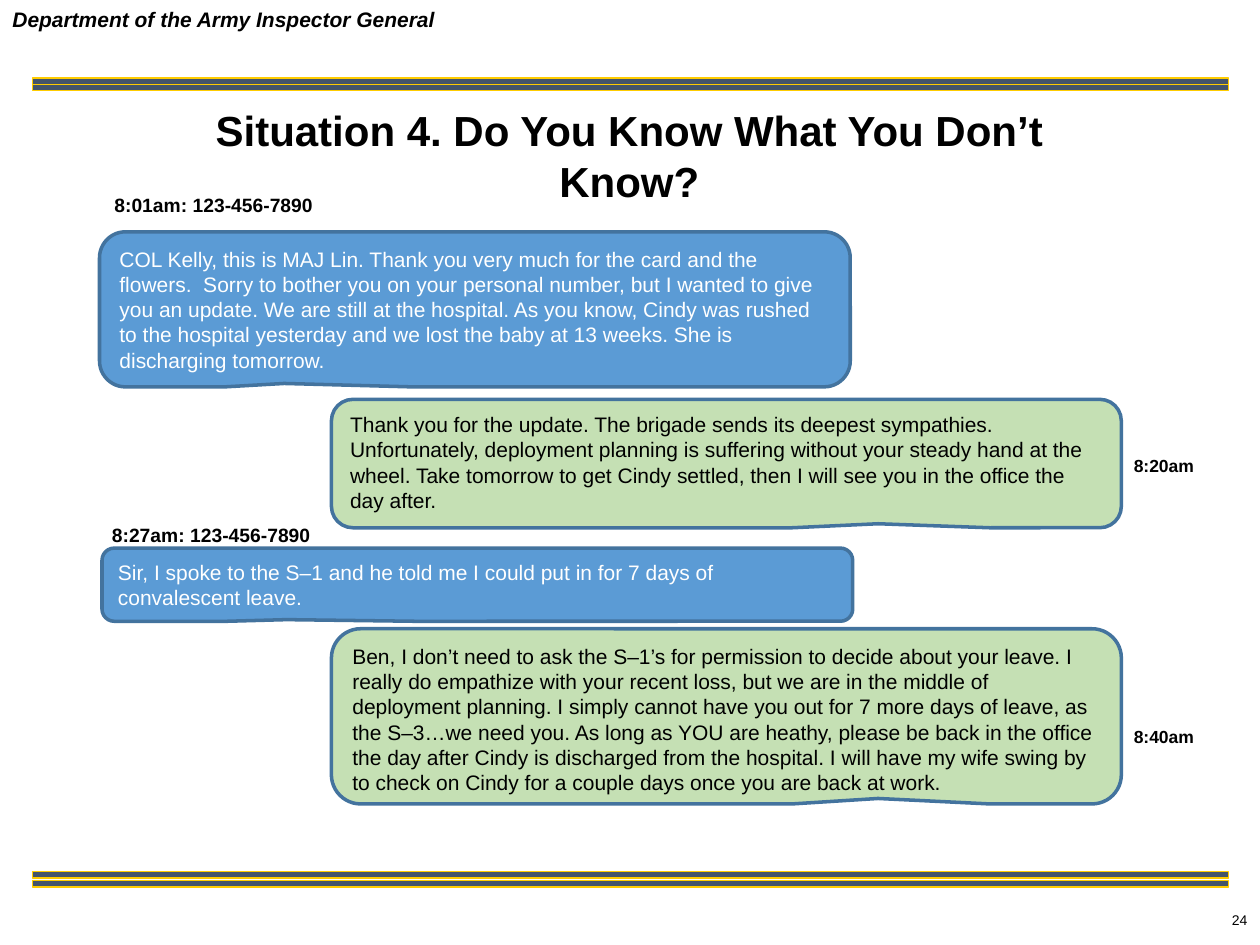
from pptx import Presentation
from pptx.dml.color import RGBColor
from pptx.enum import shapes, text
from pptx.util import Pt

COLORS = {"black": "000000", "white": "FFFFFF", "slate": "44546A", "gold": "FFCC00",
          "blue": "5B9BD5", "green": "C5E0B4", "edge": "43739E"}
TOP, MIDDLE = text.MSO_ANCHOR.TOP, text.MSO_ANCHOR.MIDDLE
LEFT, CENTER, RIGHT = text.PP_ALIGN.LEFT, text.PP_ALIGN.CENTER, text.PP_ALIGN.RIGHT


class Deck:
    font = "Arial"

    def __init__(self, width, height):
        self.prs = Presentation()
        self.prs.slide_width, self.prs.slide_height = Pt(width), Pt(height)
        self.s = self.prs.slides.add_slide(self.prs.slide_layouts[5])

    def color(self, name):
        return RGBColor.from_string(COLORS[name])

    def set_text(self, sp, words, size, color="black", bold=False, italic=False,
                 align=LEFT, anchor=TOP, wrap=True):
        tf = sp.text_frame
        tf.text = words
        tf.word_wrap = wrap
        tf.auto_size = text.MSO_AUTO_SIZE.NONE
        tf.vertical_anchor = anchor
        p = tf.paragraphs[0]
        p.alignment = align
        for r in p.runs:
            r.font.name, r.font.size = self.font, Pt(size)
            r.font.bold, r.font.italic = bold, italic
            r.font.color.rgb = self.color(color)

    def title(self, words, x, y, w, h):
        sp = self.s.shapes.title
        sp.left, sp.top, sp.width, sp.height = Pt(x), Pt(y), Pt(w), Pt(h)
        self.set_text(sp, words, 24, bold=True, align=CENTER)

    def label(self, words, x, y, w, h, size, **style):
        sp = self.s.shapes.add_textbox(Pt(x), Pt(y), Pt(w), Pt(h))
        self.set_text(sp, words, size, **style)

    def shape(self, kind, x, y, w, h, fill, line, weight):
        sp = self.s.shapes.add_shape(kind, Pt(x), Pt(y), Pt(w), Pt(h))
        sp.shadow.inherit = False
        sp.fill.solid()
        sp.fill.fore_color.rgb = self.color(fill)
        sp.line.color.rgb = self.color(line)
        sp.line.width = Pt(weight)
        return sp

    def bar(self, y):
        self.shape(shapes.MSO_SHAPE.RECTANGLE, 18.7, y, 683.3, 3.6, "slate", "gold", 0.75)

    def bubble(self, words, x, y, w, h, fill, color, tail, anchor):
        sp = self.shape(shapes.MSO_SHAPE.ROUNDED_RECTANGULAR_CALLOUT,
                        x, y, w, h, fill, "edge", 2)
        for i, value in enumerate((*tail, 0.167)):
            sp.adjustments[i] = value
        self.set_text(sp, words, 12, color, anchor=anchor)

    def received(self, words, x, y, h):
        self.bubble(words, x, y, 429, h, "blue", "white", (-0.254, 0.478), MIDDLE)

    def sent(self, words, y, h):
        self.bubble(words, 189.4, y, 451.4, h, "green", "black", (0.192, 0.469), TOP)

    def sender(self, words, x, y):
        self.label(words, x, y, 130, 20.9, 11, bold=True, wrap=False)

    def sent_time(self, words, y):
        self.label(words, 640.8, y, 49, 19.4, 10, bold=True, wrap=False)


def main():
    d = Deck(720, 540)
    d.label("Department of the Army Inspector General", 0, 0, 339, 21.6, 12,
            bold=True, italic=True)
    for y in (44.6, 48.2, 498.2, 503.3):
        d.bar(y)
    d.title("Situation 4. Do You Know What You Don’t Know?", 107.3, 56.2, 504.7, 37.4)
    d.label("24", 552.2, 511.2, 167.8, 28.8, 8, align=RIGHT, anchor=MIDDLE)

    d.received("COL Kelly, this is MAJ Lin. Thank you very much for the card and the flowers.  "
               "Sorry to bother you on your personal number, but I wanted to give you an update. "
               "We are still at the hospital. As you know, Cindy was rushed to the hospital "
               "yesterday and we lost the baby at 13 weeks. She is discharging tomorrow.",
               56.9, 132.5, 88.6)
    d.sent("Thank you for the update. The brigade sends its deepest sympathies. Unfortunately, "
           "deployment planning is suffering without your steady hand at the wheel. Take tomorrow "
           "to get Cindy settled, then I will see you in the office the day after.", 228.2, 73.4)
    d.sent_time("8:20am", 256.3)
    d.sender("8:01am: 123-456-7890", 58.3, 106.6)
    d.received("Sir, I spoke to the S–1 and he told me I could put in for 7 days of "
               "convalescent leave.", 58.3, 313.2, 41.8)
    d.sender("8:27am: 123-456-7890", 56.9, 295.2)
    d.sent("Ben, I don’t need to ask the S–1’s for permission to decide about your leave. "
           "I really do empathize with your recent loss, but we are in the middle of deployment "
           "planning. I simply cannot have you out for 7 more days of leave, as the S–3…we need "
           "you. As long as YOU are heathy, please be back in the office the day after Cindy is "
           "discharged from the hospital. I will have my wife swing by to check on Cindy for a "
           "couple days once you are back at work.", 359.3, 100.1)
    d.sent_time("8:40am", 411.1)
    d.prs.save("out.pptx")


if __name__ == "__main__":
    main()
